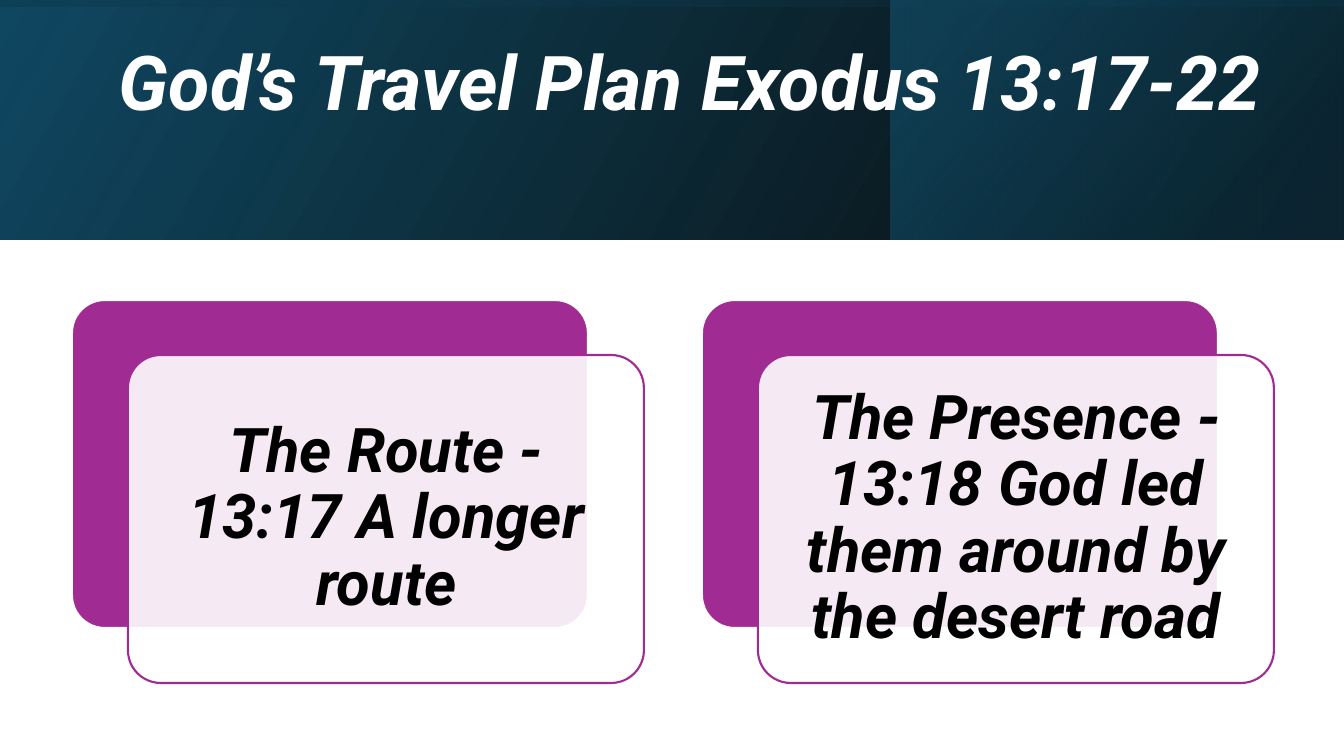
"""Build a slide with a gradient title band and two layered cards."""
from dataclasses import dataclass

from lxml import etree
from pptx import Presentation
from pptx import util as u
from pptx.dml.color import RGBColor
from pptx.enum import shapes, text
from pptx.oxml import ns
from pptx.shapes.autoshape import Shape
from pptx.slide import Slide

PX = 914400 / 100.8
WIDE, HIGH, BAND = 1344, 756, 240
WHITE = RGBColor(0xFF, 0xFF, 0xFF)
BLACK = RGBColor(0x00, 0x00, 0x00)
PLUM = RGBColor(0xA0, 0x2B, 0x93)
NAVY = RGBColor(0x10, 0x48, 0x62)
DEEP = RGBColor(0x0B, 0x30, 0x41)
TEAL = RGBColor(0x15, 0x60, 0x82)


@dataclass(frozen=True)
class Box:
    left: int
    top: int
    width: int
    height: int

    def emu(self) -> list[u.Emu]:
        sides = (self.left, self.top, self.width, self.height)
        return [u.Emu(round(side * PX)) for side in sides]

    def move(self, right: int, down: int) -> "Box":
        return Box(self.left + right, self.top + down, self.width, self.height)


@dataclass(frozen=True)
class Stop:
    place: int
    color: RGBColor
    alpha: int


@dataclass(frozen=True)
class Layer:
    box: Box
    angle: int
    stops: tuple[Stop, ...]
    turn: int = 0


@dataclass(frozen=True)
class Card:
    left: int
    words: str


LAYERS = (
    Layer(Box(0, 0, WIDE, BAND), 330,
          (Stop(0, BLACK, 96), Stop(100, NAVY, 100))),
    Layer(Box(891, 0, 452, BAND), 320,
          (Stop(19, DEEP, 68), Stop(100, TEAL, 48))),
    Layer(Box((WIDE - BAND) // 2, (BAND - WIDE) // 2, BAND, WIDE), 350,
          (Stop(23, NAVY, 16), Stop(99, BLACK, 45)), turn=270),
)
CARDS = (
    Card(72, "The Route - 13:17 A longer route"),
    Card(702, "The Presence - 13:18 God led them around by the desert road"),
)


def add_tint(node: etree._Element, color: RGBColor, alpha: int) -> None:
    tint = etree.SubElement(node, ns.qn("a:srgbClr"), val=str(color))
    etree.SubElement(tint, ns.qn("a:alpha"), val=str(alpha * 1000))


def add_layer(slide: Slide, layer: Layer) -> None:
    shape = slide.shapes.add_shape(shapes.MSO_SHAPE.RECTANGLE, *layer.box.emu())
    shape.shadow.inherit = False
    shape.line.fill.background()
    shape.rotation = layer.turn
    shape.fill.gradient()
    frame = shape._element.spPr
    frame.find(ns.qn("a:xfrm")).set("flipH", "1")
    grad = frame.find(ns.qn("a:gradFill"))
    for child in list(grad):
        grad.remove(child)
    grad.set("rotWithShape", "1")
    stops = etree.SubElement(grad, ns.qn("a:gsLst"))
    for stop in layer.stops:
        node = etree.SubElement(stops, ns.qn("a:gs"), pos=str(stop.place * 1000))
        add_tint(node, stop.color, stop.alpha)
    etree.SubElement(grad, ns.qn("a:lin"), ang=str(layer.angle * 60000), scaled="0")


def add_panel(slide: Slide, box: Box, fill: RGBColor, line: RGBColor,
              alpha: int = 100) -> Shape:
    panel = slide.shapes.add_shape(shapes.MSO_SHAPE.ROUNDED_RECTANGLE, *box.emu())
    panel.shadow.inherit = False
    panel.adjustments[0] = 0.1
    panel.fill.solid()
    panel.fill.fore_color.rgb = fill
    panel.line.color.rgb = line
    panel.line.width = u.Pt(1.5)
    if alpha < 100:
        node = panel._element.spPr.find(ns.qn("a:solidFill"))
        node.remove(node[0])
        add_tint(node, fill, alpha)
    return panel


def add_text(slide: Slide, box: Box, words: str, *, size: int, color: RGBColor,
             align: text.PP_ALIGN, anchor: text.MSO_ANCHOR,
             side: int, edge: int) -> None:
    frame = slide.shapes.add_textbox(*box.emu()).text_frame
    frame.word_wrap = True
    frame.vertical_anchor = anchor
    frame.margin_left = frame.margin_right = u.Emu(round(side * PX))
    frame.margin_top = frame.margin_bottom = u.Emu(round(edge * PX))
    para = frame.paragraphs[0]
    para.alignment = align
    para.line_spacing = 0.9
    run = para.add_run()
    run.text = words
    font = run.font
    font.name = "Roboto"
    font.size = u.Pt(size)
    font.bold = font.italic = True
    font.color.rgb = color


def add_card(slide: Slide, card: Card) -> None:
    back = Box(card.left, 300, 516, 328)
    front = back.move(56, 55)
    add_panel(slide, back, PLUM, WHITE)
    add_panel(slide, front, WHITE, PLUM, alpha=90)
    inner = Box(front.left + 10, front.top + 10, front.width - 19, front.height - 20)
    add_text(slide, inner, card.words, size=44, color=BLACK,
             align=text.PP_ALIGN.CENTER, anchor=text.MSO_ANCHOR.MIDDLE,
             side=18, edge=18)


def main() -> None:
    deck = Presentation()
    deck.slide_width = u.Emu(round(WIDE * PX))
    deck.slide_height = u.Emu(round(HIGH * PX))
    slide = deck.slides.add_slide(deck.slide_layouts[6])
    for layer in LAYERS:
        add_layer(slide, layer)
    add_text(slide, Box(109, 38, 1183, 173), "God’s Travel Plan Exodus 13:17-22",
             size=54, color=WHITE, align=text.PP_ALIGN.LEFT,
             anchor=text.MSO_ANCHOR.TOP, side=10, edge=7)
    for card in CARDS:
        add_card(slide, card)
    deck.save("out.pptx")


if __name__ == "__main__":
    main()
